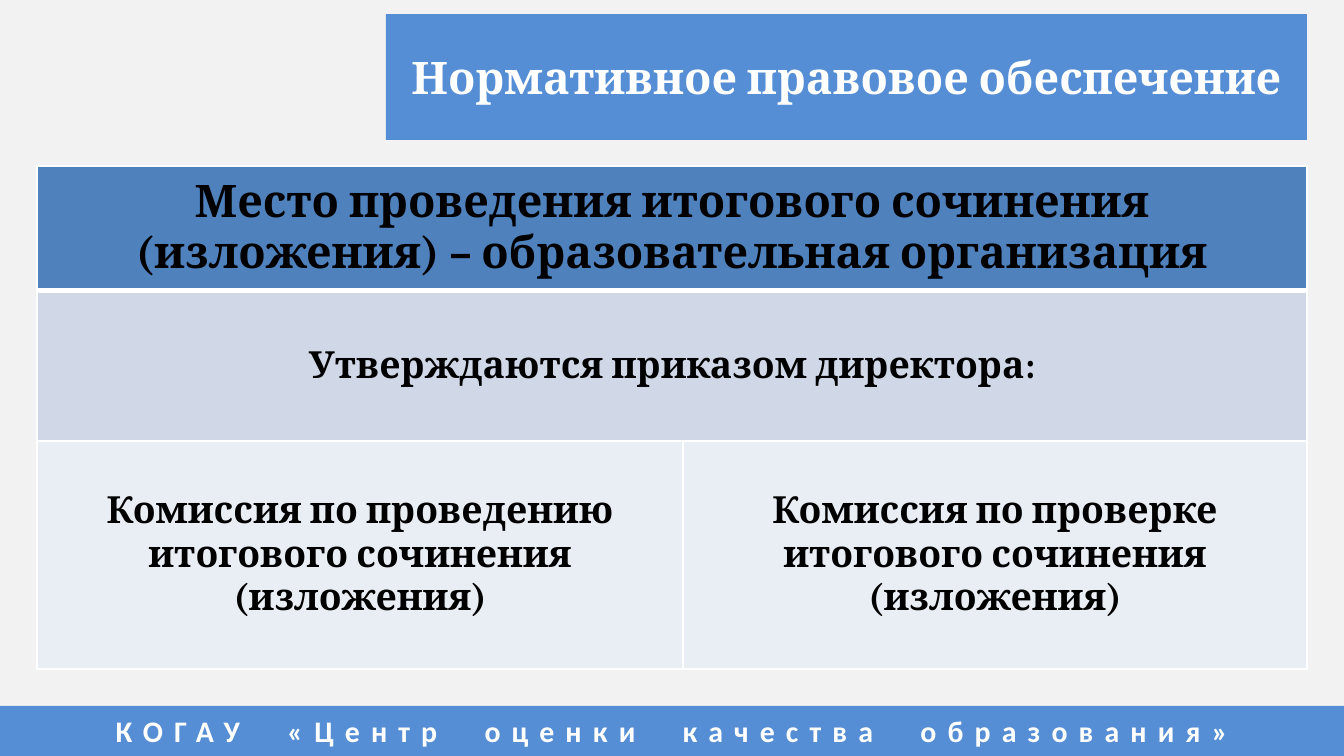
from lxml import etree
from pptx import Presentation
from pptx.dml.color import RGBColor
from pptx.enum.shapes import MSO_SHAPE
from pptx.enum.text import MSO_ANCHOR, PP_ALIGN
from pptx.oxml.ns import qn
from pptx.util import Emu, Pt

RECTANGLE = MSO_SHAPE.RECTANGLE
MIDDLE = MSO_ANCHOR.MIDDLE
CENTER = PP_ALIGN.CENTER

BACKGROUND = RGBColor(0xF2, 0xF2, 0xF2)
BLUE = RGBColor(0x55, 0x8E, 0xD5)
HEADER_BLUE = RGBColor(0x4F, 0x81, 0xBD)
BAND_DARK = RGBColor(0xD0, 0xD8, 0xE8)
BAND_LIGHT = RGBColor(0xE9, 0xED, 0xF4)
WHITE = RGBColor(0xFF, 0xFF, 0xFF)
BLACK = RGBColor(0x00, 0x00, 0x00)

EMU_PER_PX = 914400 / 134.4


def px(length):
    return Emu(round(length * EMU_PER_PX))


def write_text(frame, text, size, color, font="Cambria", spacing=None, word_gap=None):
    """Write bold centred lines; spacing and word_gap are letter and space tracking in pt."""
    frame.word_wrap = True
    for index, line in enumerate(text.split("\n")):
        paragraph = frame.paragraphs[0] if index == 0 else frame.add_paragraph()
        paragraph.alignment = CENTER
        pieces = line.replace(" ", "\n \n").split("\n") if word_gap else [line]
        for piece in pieces:
            run = paragraph.add_run()
            run.text = piece
            run.font.name = font
            run.font.size = Pt(size)
            run.font.bold = True
            run.font.color.rgb = color
            if spacing:
                tracking = word_gap if word_gap and piece == " " else spacing
                run.font._element.set("spc", str(round(tracking * 100)))


class SlideBuilder:
    def __init__(self, slide):
        self.slide = slide
        background = slide.background.fill
        background.solid()
        background.fore_color.rgb = BACKGROUND

    def bar(self, left, top, width, height, text, **text_format):
        shape = self.slide.shapes.add_shape(
            RECTANGLE, px(left), px(top), px(width), px(height))
        shape.shadow.inherit = False
        shape.fill.solid()
        shape.fill.fore_color.rgb = BLUE
        shape.line.fill.background()
        shape.text_frame.vertical_anchor = MIDDLE
        write_text(shape.text_frame, text, color=WHITE, **text_format)

    def table(self, left, top, column_widths, row_heights):
        table = self.slide.shapes.add_table(
            len(row_heights), len(column_widths), px(left), px(top),
            px(sum(column_widths)), px(sum(row_heights))).table
        for column, width in zip(table.columns, column_widths):
            column.width = px(width)
        for row, height in zip(table.rows, row_heights):
            row.height = px(height)
        return table

    def style_cell(self, cell, fill, top=1, bottom=1):
        cell.fill.solid()
        cell.fill.fore_color.rgb = fill
        cell.vertical_anchor = MIDDLE
        properties = cell._tc.get_or_add_tcPr()
        borders = {"a:lnL": 1, "a:lnR": 1, "a:lnT": top, "a:lnB": bottom}
        for index, (tag, width) in enumerate(borders.items()):
            border = etree.Element(qn(tag), w=str(Pt(width)))
            solid = etree.SubElement(border, qn("a:solidFill"))
            etree.SubElement(solid, qn("a:srgbClr"), val=str(WHITE))
            properties.insert(index, border)


def main():
    presentation = Presentation()
    presentation.slide_width = px(1344)
    presentation.slide_height = px(756)
    builder = SlideBuilder(presentation.slides.add_slide(presentation.slide_layouts[6]))

    # Footer and title
    builder.bar(0, 706, 1344, 50, "КОГАУ «Центр оценки качества образования»",
                size=16, font="Calibri", spacing=6, word_gap=15.6)
    builder.bar(386, 14, 921, 126, "Нормативное правовое обеспечение", size=24)

    # Table: two full-width rows above the two commissions
    table = builder.table(37, 166, (646, 624), (125, 150, 228))
    fills = (HEADER_BLUE, BAND_DARK, BAND_LIGHT)
    for row, fill in enumerate(fills):
        for column in range(2):
            builder.style_cell(table.cell(row, column), fill,
                               top=3 if row == 1 else 1, bottom=3 if row == 0 else 1)
    for row in range(2):
        table.cell(row, 0).merge(table.cell(row, 1))

    texts = (
        (0, 0, 24, "Место проведения итогового сочинения (изложения) – образовательная организация"),
        (1, 0, 20, "Утверждаются приказом директора:"),
        (2, 0, 20, "Комиссия по проведению итогового сочинения (изложения)"),
        (2, 1, 20, "Комиссия по проверке\nитогового сочинения (изложения)"),
    )
    for row, column, size, text in texts:
        write_text(table.cell(row, column).text_frame, text, size, BLACK)

    presentation.save("out.pptx")


if __name__ == "__main__":
    main()
